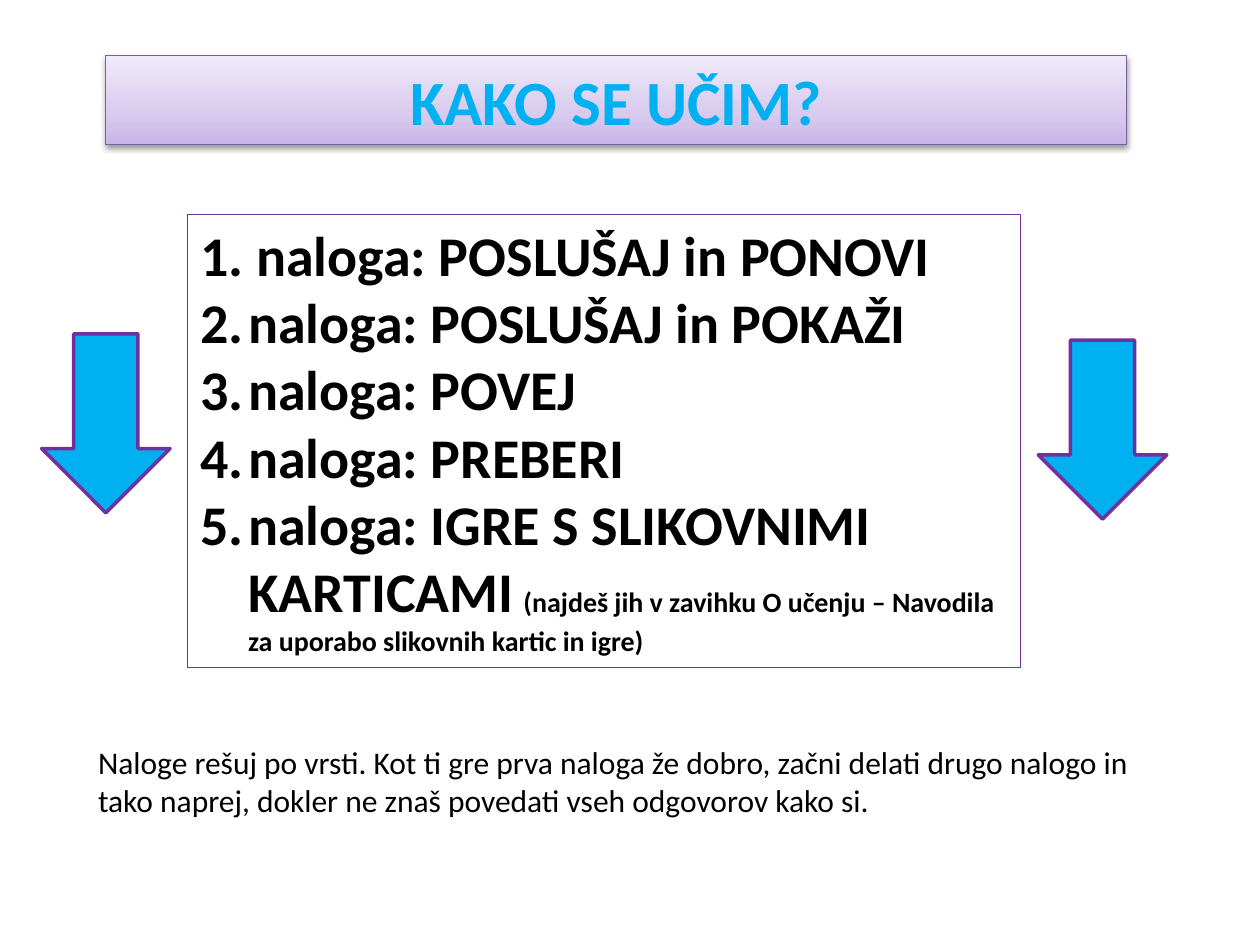
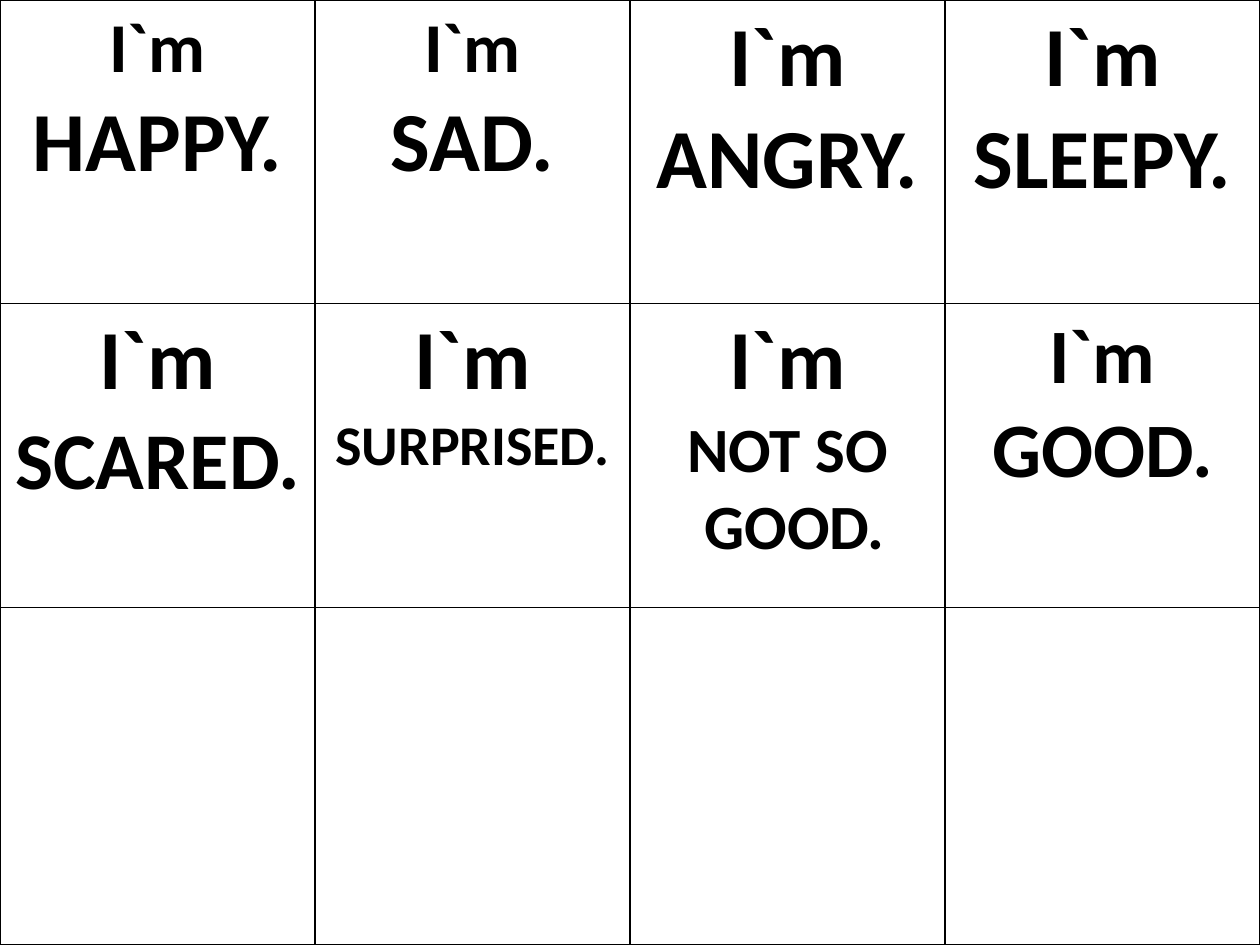
from lxml.etree import SubElement
from pptx import Presentation
from pptx.dml.color import RGBColor
from pptx.enum.shapes import MSO_SHAPE
from pptx.enum.text import PP_ALIGN
from pptx.oxml import parse_xml
from pptx.oxml.ns import nsdecls, qn
from pptx.util import Inches, Pt

FONT = "Calibri"
BLACK, BLUE, PURPLE, TITLE_EDGE = "000000", "00B0F0", "7030A0", "7D60A0"
TITLE_STOPS = [(0, "C9B5E8"), (35, "D8CBEE"), (100, "F0EAF9")]

TITLE = "KAKO SE UČIM?"
# Each task is a list of (text, size) spans; numbering starts with the second.
TASKS = [
    [("1. naloga: POSLUŠAJ in PONOVI", 32)],
    [("naloga: POSLUŠAJ in POKAŽI", 32)],
    [("naloga: POVEJ", 32)],
    [("naloga: PREBERI", 32)],
    [("naloga: IGRE S SLIKOVNIMI KARTICAMI", 32), (" ", 24),
     ("(najdeš jih v zavihku O učenju – Navodila za uporabo slikovnih kartic in igre)", 16)],
]
ADVICE = ("Naloge rešuj po vrsti. Kot ti gre prva naloga že dobro, začni delati drugo nalogo in "
          "tako naprej, dokler ne znaš povedati vseh odgovorov kako si.")
ARROWS = [(8.24, 2.7), (0.33, 2.65)]

# Each card is a list of (line, size).
CARDS = [
    [[("I`m", 40), ("HAPPY.", 48)], [("I`m", 40), ("SAD.", 48)],
     [("I`m", 48), ("ANGRY.", 48)], [("I`m", 48), ("SLEEPY.", 48)]],
    [[("I`m", 48), ("SCARED.", 46)], [("I`m", 48), ("SURPRISED.", 32)],
     [("I`m", 48), ("NOT SO", 36), (" GOOD.", 36)], [("I`m", 44), ("GOOD.", 44)]],
    [[], [], [], []],
]
ROW_HEIGHTS = [2.41, 2.41, 2.68]


def color(hex_code):
    return RGBColor.from_string(hex_code)


def place(*lengths):
    return [Inches(length) for length in lengths]


def add_span(para, text, size, hex_code=BLACK, bold=True):
    span = para.add_run()
    span.text = text
    span.font.name, span.font.size, span.font.bold = FONT, Pt(size), bold
    span.font.color.rgb = color(hex_code)


def set_line(shape, hex_code, width):
    shape.line.color.rgb = color(hex_code)
    shape.line.width = Pt(width)


def next_para(frame, index):
    return frame.paragraphs[0] if index == 0 else frame.add_paragraph()


def add_text_box(slide, *lengths):
    box = slide.shapes.add_textbox(*place(*lengths))
    box.text_frame.word_wrap = True
    return box


def add_title(slide):
    band = slide.shapes.add_shape(MSO_SHAPE.RECTANGLE, *place(0.84, 0.44, 8.1, 0.71))
    stops = "".join(f'<a:gs pos="{position * 1000}"><a:srgbClr val="{code}"/></a:gs>'
                    for position, code in TITLE_STOPS)
    geometry = band._element.spPr.find(qn("a:prstGeom"))
    geometry.addnext(parse_xml(
        f'<a:gradFill {nsdecls("a")} rotWithShape="1"><a:gsLst>{stops}</a:gsLst>'
        '<a:lin ang="16200000" scaled="1"/></a:gradFill>'))
    set_line(band, TITLE_EDGE, 0.75)
    band.shadow.inherit = False
    band._element.spPr.find(qn("a:effectLst")).append(parse_xml(
        f'<a:outerShdw {nsdecls("a")} blurRad="{Pt(3.1)}" dist="{Pt(1.6)}" dir="5400000" '
        f'rotWithShape="0"><a:srgbClr val="{BLACK}"><a:alpha val="38000"/></a:srgbClr>'
        '</a:outerShdw>'))
    para = band.text_frame.paragraphs[0]
    para.alignment = PP_ALIGN.CENTER
    add_span(para, TITLE, 36, BLUE)


def number_from_two(para):
    properties = para._p.get_or_add_pPr()
    properties.set("marL", str(Inches(0.38)))
    properties.set("indent", str(Inches(-0.38)))
    SubElement(properties, qn("a:buFont"), typeface="+mj-lt")
    SubElement(properties, qn("a:buAutoNum"), type="arabicPeriod", startAt="2")


def add_border(cell):
    properties = cell._tc.get_or_add_tcPr()
    for index, side in enumerate("LRTB"):
        properties.insert(index, parse_xml(
            f'<a:ln{side} {nsdecls("a")} w="{Pt(1)}"><a:solidFill><a:srgbClr val="{BLACK}"/>'
            f'</a:solidFill></a:ln{side}>'))


def build_tasks(slide):
    for left, top in ARROWS:
        arrow = slide.shapes.add_shape(MSO_SHAPE.DOWN_ARROW, *place(left, top, 1.02, 1.42))
        arrow.fill.solid()
        arrow.fill.fore_color.rgb = color(BLUE)
        set_line(arrow, PURPLE, 2)
        arrow.shadow.inherit = False

    add_title(slide)

    task_box = add_text_box(slide, 1.49, 1.7, 6.61, 3.6)
    set_line(task_box, PURPLE, 0.75)
    for index, spans in enumerate(TASKS):
        para = next_para(task_box.text_frame, index)
        if index:
            number_from_two(para)
        for text, size in spans:
            add_span(para, text, size)

    advice_box = add_text_box(slide, 0.68, 5.85, 8.74, 0.71)
    add_span(advice_box.text_frame.paragraphs[0], ADVICE, 18, bold=False)


def build_cards(slide):
    table = slide.shapes.add_table(len(CARDS), len(CARDS[0]), *place(0, 0, 10, 7.5)).table
    table.first_row = table.horz_banding = False
    for row, height, cards in zip(table.rows, ROW_HEIGHTS, CARDS):
        row.height = Inches(height)
        for cell, lines in zip(row.cells, cards):
            cell.fill.background()
            add_border(cell)
            for index, (text, size) in enumerate(lines):
                para = next_para(cell.text_frame, index)
                para.alignment = PP_ALIGN.CENTER
                add_span(para, text, size)


def main():
    deck = Presentation()
    deck.slide_width, deck.slide_height = place(10, 7.5)
    for build in (build_tasks, build_cards):
        build(deck.slides.add_slide(deck.slide_layouts[6]))
    deck.save("out.pptx")


if __name__ == "__main__":
    main()
